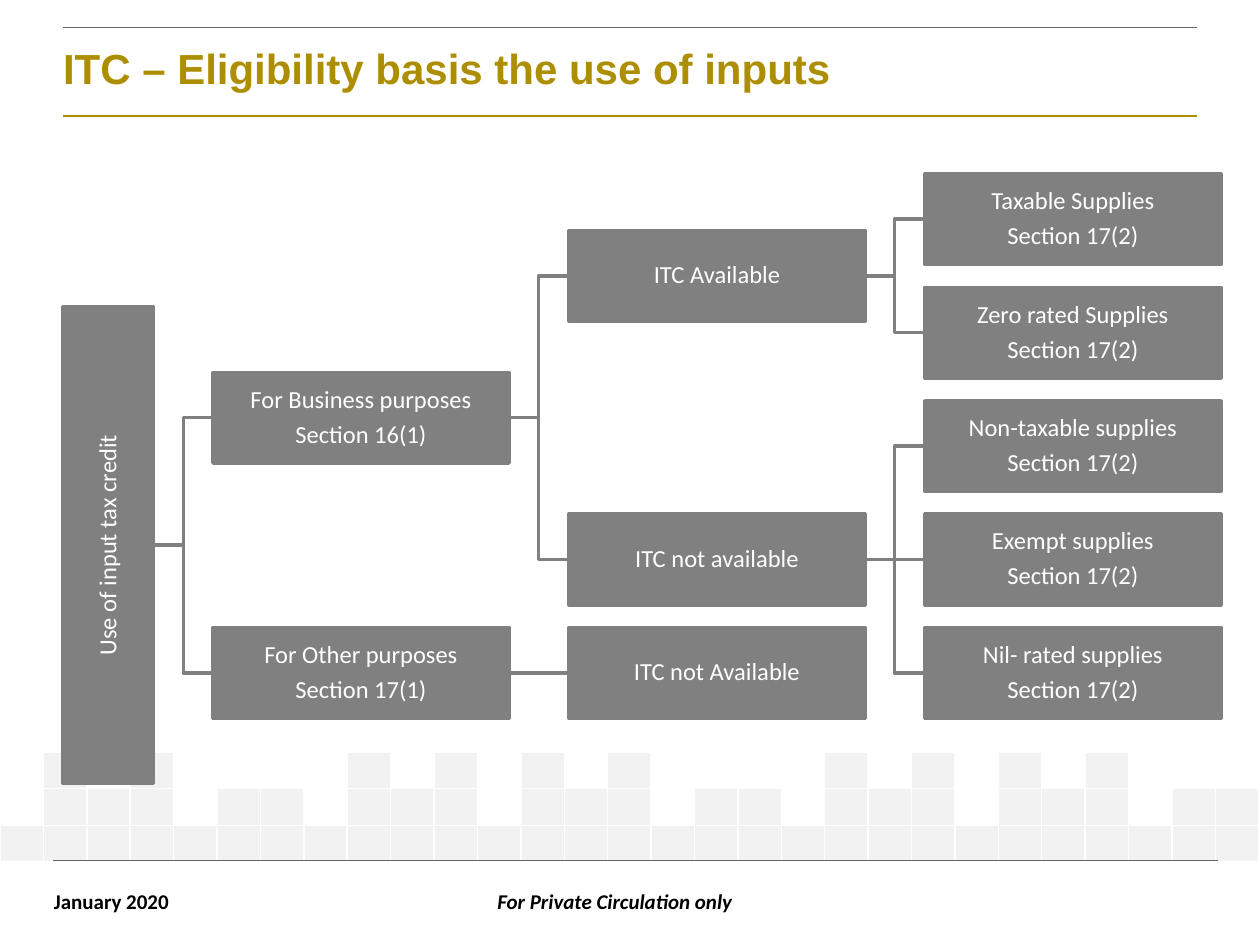
import pptx
import pptx.util
import pptx.dml.color
import pptx.enum.shapes
import pptx.enum.text
import pptx.oxml
import pptx.oxml.ns
from dataclasses import dataclass
from lxml import etree

In, Pt = pptx.util.Inches, pptx.util.Pt
RGB = pptx.dml.color.RGBColor.from_string
ALIGN, ANCHOR = pptx.enum.text.PP_ALIGN, pptx.enum.text.MSO_ANCHOR
qn = pptx.oxml.ns.qn


@dataclass
class Theme:
    gold: str = "AD8E00"
    box: str = "808080"
    rule: str = "646464"
    tile: str = "F2F2F2"
    white: str = "FFFFFF"
    black: str = "000000"
    head_font: str = "Arial"
    body_font: str = "Calibri"
    title: int = 24
    body: int = 14
    footer: int = 12


T = Theme()

# Content: a node is (lines, children), or (lines, leaf row)
TITLE = "ITC – Eligibility basis the use of inputs"
SECTION = "Section 17(2)"
TREE = (["Use of input tax credit"], [
    (["For Business purposes", "Section 16(1)"], [
        (["ITC Available"], [
            (["Taxable Supplies", SECTION], 0),
            (["Zero rated Supplies", SECTION], 1)]),
        (["ITC not available"], [
            (["Non-taxable supplies", SECTION], 2),
            (["Exempt supplies", SECTION], 3),
            (["Nil- rated supplies", SECTION], 4)])]),
    (["For Other purposes", "Section 17(1)"], [
        (["ITC not Available"], 4)])])
TILES = [".#.#....#.#.#.#....#.#.#.#...",
         ".###.##.###.###.##.###.###.##",
         "#" * 29]
# Rules: left, right, height on slide, colour, weight
RULES = [(0.5, 9.5, 0.92, T.gold, 1.5),
         (0.5, 9.5, 0.22, T.rule, 0.5),
         (0.42, 9.67, 6.83, T.rule, 0.25)]

# Grid of the tree, in inches
W, H = 10, 7.5
ROW_TOP, ROW_STEP = 1.74, 0.9       # centre of first row, row pitch
COL_LEFT, COL_STEP = 1.69, 2.825    # left of first box column, pitch
BOX_W, BOX_H, GAP = 2.35, 0.72, 0.47
ROOT_LEN = 3.78

prs = pptx.Presentation()
prs.slide_width, prs.slide_height = In(W), In(H)
s = prs.slides.add_slide(prs.slide_layouts[5])


def write(tf, lines, size=T.body, font=T.body_font, color=T.white, bold=False,
          italic=False, align=ALIGN.CENTER, anchor=ANCHOR.MIDDLE,
          spacing=None, before=0, inset=(0.01,) * 4, wrap=True):
    tf.word_wrap, tf.vertical_anchor = wrap, anchor
    tf.margin_left, tf.margin_top, tf.margin_right, tf.margin_bottom = map(In, inset)
    for i, line in enumerate(lines):
        p = tf.add_paragraph() if i else tf.paragraphs[0]
        p.alignment, p.line_spacing = align, spacing
        if i:
            p.space_before = Pt(before)
        r = p.add_run()
        r.text = line
        f = r.font
        f.name, f.size, f.bold, f.italic = font, Pt(size), bold, italic
        f.color.rgb = RGB(color)


def line(x1, y1, x2, y2, color, weight):
    c = s.shapes.add_connector(pptx.enum.shapes.MSO_CONNECTOR.STRAIGHT,
                               In(x1), In(y1), In(x2), In(y2))
    c.line.color.rgb, c.line.width = RGB(color), Pt(weight)
    etree.SubElement(c._element.spPr, qn("a:effectLst"))


def link(x, y1, y2):
    """Join a parent's right edge to a child's left edge."""
    if abs(y1 - y2) < 0.01:
        line(x, y1, x + GAP, y2, T.box, 2)
        return
    mid = x + GAP / 2
    fb = s.shapes.build_freeform(In(x), In(y1))
    fb.add_line_segments([(In(mid), In(y1)), (In(mid), In(y2)),
                          (In(x + GAP), In(y2))], close=False)
    sp = fb.convert_to_shape()
    sp.fill.background()
    sp.line.color.rgb, sp.line.width = RGB(T.box), Pt(2)
    sp.shadow.inherit = False


def box(lines, cx, cy, w, rotation=0):
    sp = s.shapes.add_shape(pptx.enum.shapes.MSO_SHAPE.RECTANGLE, In(cx - w / 2),
                            In(cy - BOX_H / 2), In(w), In(BOX_H))
    sp.rotation = rotation
    sp.shadow.inherit = False
    sp.fill.solid()
    sp.fill.fore_color.rgb = RGB(T.box)
    sp.line.color.rgb, sp.line.width = RGB(T.box), Pt(2)
    write(sp.text_frame, lines, spacing=0.9, before=4.9)


def row_of(node):
    """A parent sits midway between its children."""
    below = node[1]
    return sum(map(row_of, below)) / len(below) if isinstance(below, list) else below


def draw(node, level=0):
    lines, below = node
    y = ROW_TOP + ROW_STEP * row_of(node)
    left = COL_LEFT + COL_STEP * (level - 1)
    right = left + BOX_W if level else COL_LEFT - GAP
    for child in below if isinstance(below, list) else []:
        link(right, y, ROW_TOP + ROW_STEP * row_of(child))
        draw(child, level + 1)
    if level:
        box(lines, left + BOX_W / 2, y, BOX_W)
    else:
        box(lines, right - BOX_H / 2, y, ROOT_LEN, 270)


# Tile band
table = s.shapes.add_table(len(TILES), len(TILES[0]), 0, In(5.97), In(W), In(0.87)).table
table.first_row = table.horz_banding = False
for col in table.columns:
    col.width = int(In(W) / len(TILES[0]))
for i, marks in enumerate(TILES):
    table.rows[i].height = In(0.29)
    for j, mark in enumerate(marks):
        cell = table.cell(i, j)
        cell.margin_left = cell.margin_right = cell.margin_top = cell.margin_bottom = 0
        etree.SubElement(cell.text_frame.paragraphs[0]._p, qn("a:endParaRPr"), sz="800")
        tcPr = cell._tc.get_or_add_tcPr()
        for side in ("lnL", "lnR", "lnT", "lnB"):
            ln = etree.SubElement(tcPr, qn("a:" + side), w=str(Pt(1)))
            fill = etree.SubElement(ln, qn("a:solidFill"))
            etree.SubElement(fill, qn("a:srgbClr"), val=T.white)
        if mark == "#":
            cell.fill.solid()
            cell.fill.fore_color.rgb = RGB(T.tile)
        else:
            cell.fill.background()

# Rules
for x1, x2, y, color, weight in RULES:
    line(x1, y, x2, y, color, weight)

# Footer
FOOTER = dict(size=T.footer, color=T.black, bold=True, anchor=ANCHOR.TOP,
              inset=(0.1, 0.05, 0.1, 0.05))
for text, x, w, extra in [
        ("January 2020", 0.33, 1.13, dict(align=ALIGN.LEFT, wrap=False)),
        ("For Private Circulation only", 2.42, 4.92, dict(italic=True))]:
    tb = s.shapes.add_textbox(In(x), In(7), In(w), In(0.3))
    write(tb.text_frame, [text], **FOOTER, **extra)

# Title
title = s.shapes.title
title.left, title.top, title.width, title.height = In(0.5), In(0.22), In(9), In(0.66)
write(title.text_frame, [TITLE], size=T.title, font=T.head_font, color=T.gold, bold=True,
      align=ALIGN.LEFT, spacing=0.85, inset=(0, 0.04, 0, 0))

# Tree
draw(TREE)

prs.save("out.pptx")
